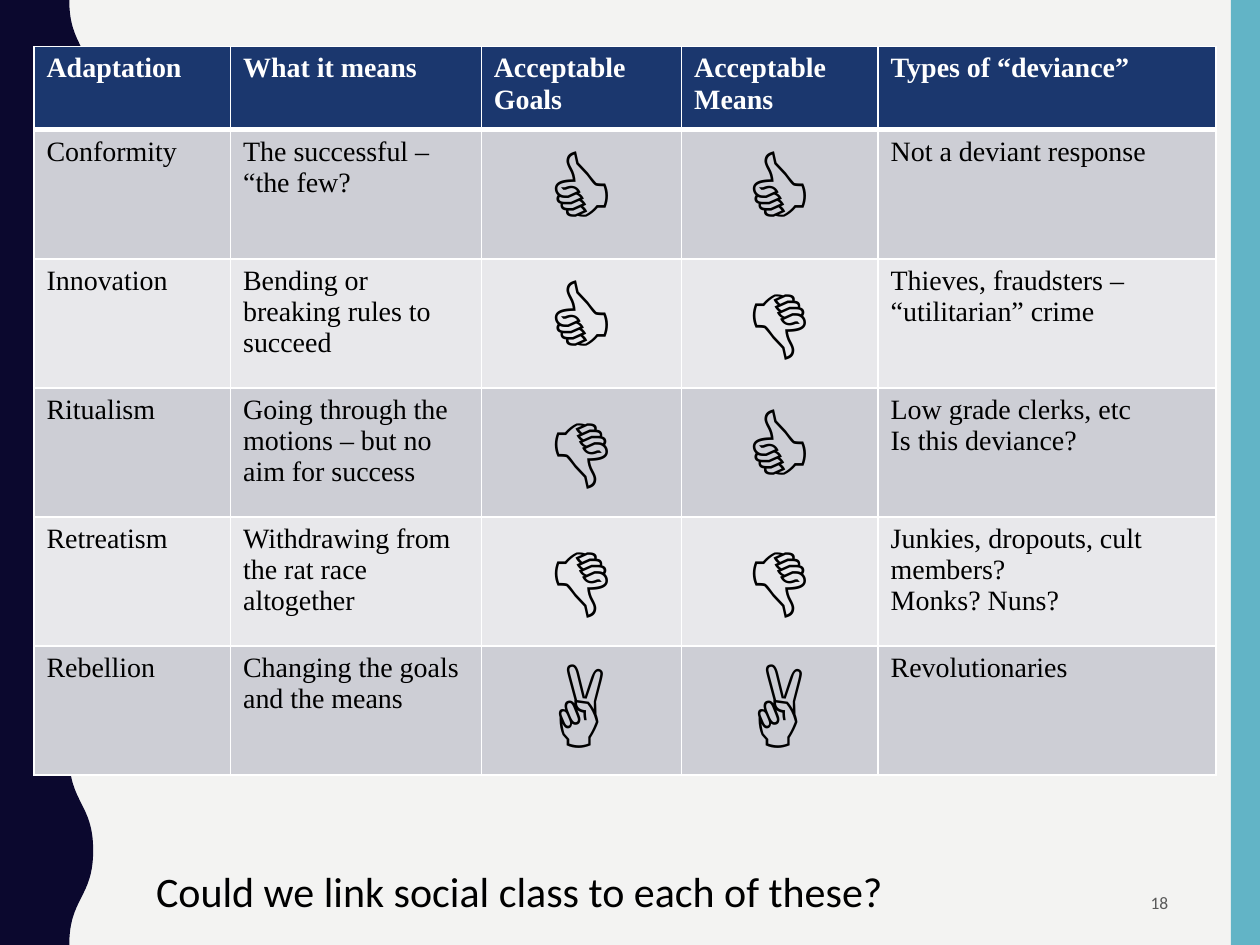
"""Build a slide with a table of the five adaptations to strain."""
import pptx
import pptx.util
import pptx.dml.color
import pptx.enum.shapes
import pptx.enum.text
import pptx.oxml.ns
import lxml.etree

HEAD = ["Adaptation", "What it means", "Acceptable Goals", "Acceptable Means", "Types of “deviance”"]
ROWS = [
    ["Conformity", "The successful – “the few?", "👍", "👍", "Not a deviant response"],
    ["Innovation", "Bending or breaking rules to succeed", "👍", "👎",
     "Thieves, fraudsters – “utilitarian” crime"],
    ["Ritualism", "Going through the motions – but no aim for success", "👎", "👍",
     "Low grade clerks, etc\nIs this deviance?"],
    ["Retreatism", "Withdrawing from the rat race altogether", "👎", "👎",
     "Junkies, dropouts, cult members?\nMonks? Nuns?"],
    ["Rebellion", "Changing the goals and the means", "✌", "✌", "Revolutionaries"],
]
ASK = "Could we link social class to each of these?"
PAGE = "18"
COLS = [1.56, 1.99, 1.59, 1.56, 2.68]
HIGH = [0.66] + [1.02] * len(ROWS)
SIGNS = (2, 3)
HUE = {"back": "F3F3F2", "bar": "62B4C6", "wave": "0B082E", "head": "1B376E",
       "odd": "CDCED5", "even": "E8E8EB", "white": "FFFFFF", "black": "000000", "gray": "595959"}
W, H = 10, 7.5
ALIGN = pptx.enum.text.PP_ALIGN
inch = pptx.util.Inches
qn = pptx.oxml.ns.qn


def tint(name):
    return pptx.dml.color.RGBColor.from_string(HUE[name])


def write(frame, text, size=16, font="Times New Roman", hue="black", bold=False,
          align=ALIGN.LEFT, lead=None):
    frame.word_wrap = True
    for i, line in enumerate(text.split("\n")):
        para = frame.paragraphs[0] if i == 0 else frame.add_paragraph()
        para.alignment = align
        if lead:
            para.line_spacing = pptx.util.Pt(lead)
        run = para.add_run()
        run.text = line
        face = run.font
        face.name, face.size, face.bold = font, pptx.util.Pt(size), bold
        face.color.rgb = tint(hue)


def label(slide, box, text, anchor, **style):
    frame = slide.shapes.add_textbox(*map(inch, box)).text_frame
    frame.vertical_anchor = anchor
    write(frame, text, **style)


def paint(shape, hue):
    shape.shadow.inherit = False
    shape.fill.solid()
    shape.fill.fore_color.rgb = tint(hue)
    shape.line.fill.background()


def wave(slide, low=0.55, high=0.74, bends=10):
    pitch = H / bends
    knots = [(high if k % 2 else low, k * pitch) for k in range(bends + 1)]
    dots = [(inch(x), inch(y)) for x, y in knots + [(0, H), (0, 0)]]
    pen = slide.shapes.build_freeform(*dots[0], scale=1.0)
    pen.add_line_segments(dots[1:], close=True)
    shape = pen.convert_to_shape()
    paint(shape, "wave")
    lines = list(shape._element.iter(qn("a:lnTo")))
    for line, (x, y), (u, v) in zip(lines[:bends], dots, dots[1:]):
        line.tag = qn("a:cubicBezTo")
        mid = (y + v) // 2
        for spot, left in enumerate((x, u)):
            line.insert(spot, lxml.etree.Element(qn("a:pt"), x=str(left), y=str(mid)))


def edge(cell, foot):
    props = cell._tc.get_or_add_tcPr()
    for i, side in enumerate(("lnL", "lnR", "lnT", "lnB")):
        width = foot if side == "lnB" else 1
        line = lxml.etree.Element(qn("a:" + side), w=str(pptx.util.Pt(width)))
        fill = lxml.etree.SubElement(line, qn("a:solidFill"))
        lxml.etree.SubElement(fill, qn("a:srgbClr"), val=HUE["white"])
        props.insert(i, line)


def grid(slide):
    cells = [HEAD] + ROWS
    box = (0.27, 0.37, sum(COLS), sum(HIGH))
    table = slide.shapes.add_table(len(cells), len(COLS), *map(inch, box)).table
    for col, wide in zip(table.columns, COLS):
        col.width = inch(wide)
    for r, line in enumerate(cells):
        table.rows[r].height = inch(HIGH[r])
        for c, text in enumerate(line):
            cell = table.cell(r, c)
            cell.fill.solid()
            cell.fill.fore_color.rgb = tint("head" if r == 0 else "odd" if r % 2 else "even")
            edge(cell, 1 if r else 3)
            if r == 0:
                style = {"hue": "white", "bold": True}
            elif c in SIGNS:
                style = {"size": 60, "align": ALIGN.CENTER, "lead": 66.5}
            else:
                style = {}
            write(cell.text_frame, text, **style)


def main():
    deck = pptx.Presentation()
    deck.slide_width, deck.slide_height = inch(W), inch(H)
    slide = deck.slides.add_slide(deck.slide_layouts[6])
    slide.background.fill.solid()
    slide.background.fill.fore_color.rgb = tint("back")
    bar = slide.shapes.add_shape(pptx.enum.shapes.MSO_SHAPE.RECTANGLE,
                                 inch(W - 0.23), 0, inch(0.23), inch(H))
    paint(bar, "bar")
    wave(slide)
    anchor = pptx.enum.text.MSO_ANCHOR
    label(slide, (7.06, 6.97, 2.31, 0.38), PAGE, anchor.MIDDLE,
          size=10, font="Calibri", hue="gray", align=ALIGN.RIGHT)
    grid(slide)
    label(slide, (1.14, 6.82, 7.56, 0.5), ASK, anchor.TOP, size=24, font="Calibri")
    deck.save("out.pptx")


if __name__ == "__main__":
    main()
